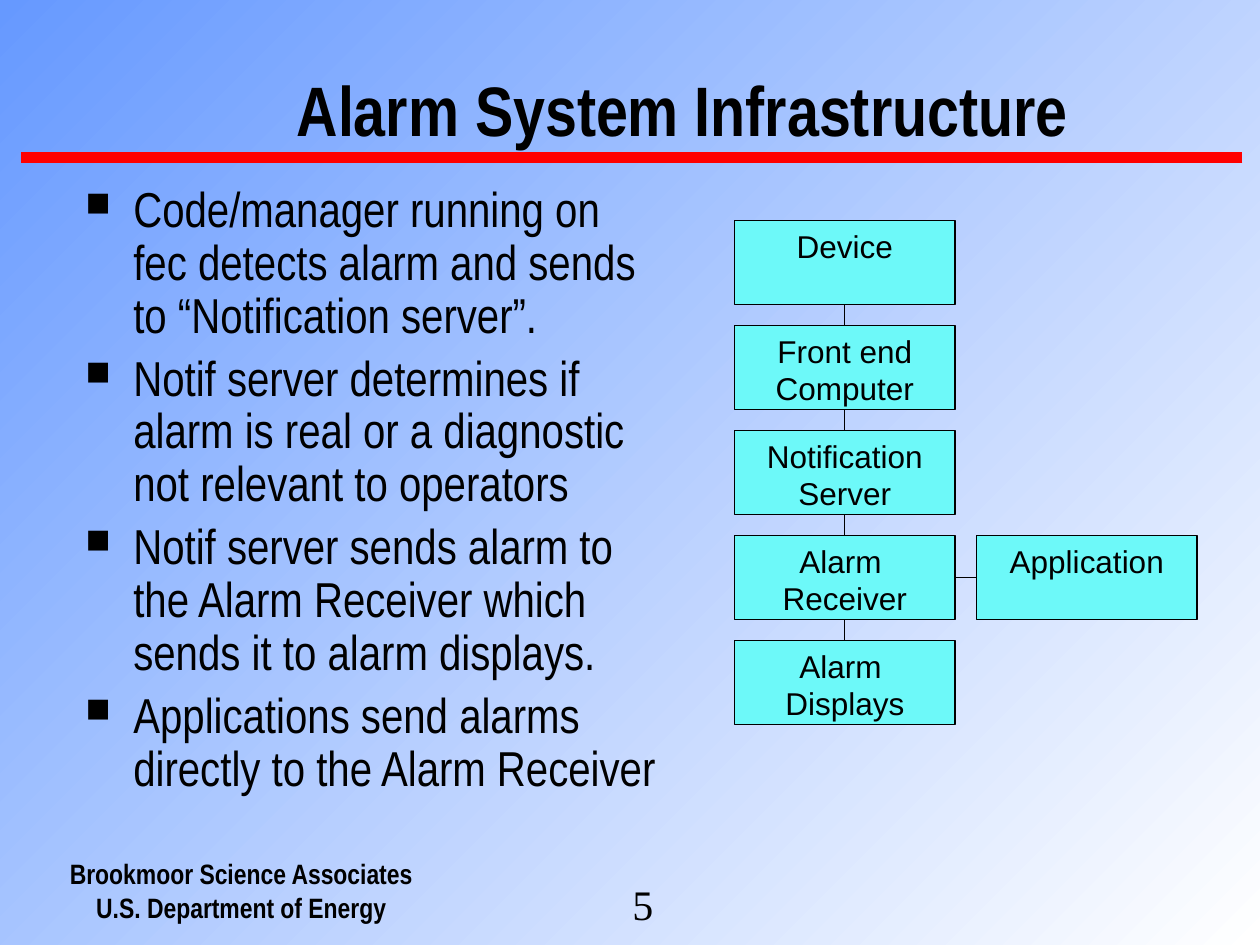
from lxml import etree
from pptx import Presentation
from pptx.dml.color import RGBColor
from pptx.enum import shapes, text
from pptx.oxml import parse_xml
from pptx.oxml.ns import nsdecls, qn
from pptx.util import Inches, Pt

TITLE = "Alarm System Infrastructure"
BULLETS = [
    "Code/manager running on fec detects alarm and sends to “Notification server”.",
    "Notif server determines if alarm is real or a diagnostic not relevant to operators",
    "Notif server sends alarm to the Alarm Receiver which sends it to alarm displays.",
    "Applications send alarms directly to the Alarm Receiver",
]
FOOTER = ["Brookmoor Science Associates", "U.S. Department of Energy"]
PAGE = "5"
CHAIN = [
    ["Device"],
    ["Front end", "Computer"],
    ["Notification", "Server"],
    ["Alarm ", "Receiver"],
    ["Alarm ", "Displays"],
]
APPLICATION = ["Application"]
RECEIVER_ROW = 3

COLORS = {"sky": "6699FF", "white": "FFFFFF", "rule": "FF0000",
          "box": "6DF9F9", "ink": "000000", "shade": "808080"}
NARROW, SANS, SERIF = "Arial Narrow", "Arial", "Times New Roman"
BOX_W, BOX_H = 1.75, 0.67
CHAIN_X, APP_X, CHAIN_Y = 5.83, 7.75, 1.75
PITCH = 5 / 6


def rgb(name):
    return RGBColor.from_string(COLORS[name])


def add_run(p, words, size, face, bold=False):
    r = p.add_run()
    r.text = words
    r.font.size = Pt(size)
    r.font.name = face
    r.font.bold = bold
    r.font.color.rgb = rgb("ink")
    return r


def add_text_box(s, x, y, w, h):
    tf = s.shapes.add_textbox(*map(Inches, (x, y, w, h))).text_frame
    tf.word_wrap = True
    return tf


def add_line(s, start, end, color="ink", width=0.75):
    line = s.shapes.add_connector(shapes.MSO_CONNECTOR.STRAIGHT,
                                  *map(Inches, start + end))
    line.line.color.rgb = rgb(color)
    line.line.width = Pt(width)
    etree.SubElement(line._element.spPr, qn("a:effectLst"))
    return line


def add_box(s, x, y, lines):
    sp = s.shapes.add_shape(shapes.MSO_SHAPE.RECTANGLE,
                            *map(Inches, (x, y, BOX_W, BOX_H)))
    sp.shadow.inherit = False
    sp.fill.solid()
    sp.fill.fore_color.rgb = rgb("box")
    sp.line.color.rgb = rgb("ink")
    sp.line.width = Pt(0.75)
    tf = sp.text_frame
    tf.vertical_anchor = text.MSO_ANCHOR.TOP
    for i, words in enumerate(lines):
        p = tf.add_paragraph() if i else tf.paragraphs[0]
        p.alignment = text.PP_ALIGN.CENTER
        add_run(p, words, 18, SANS)
    return sp


def join(s, first, first_side, second, second_side):
    line = add_line(s, (0, 0), (0, 0))
    line.begin_connect(first, first_side)
    line.end_connect(second, second_side)


prs = Presentation()
prs.slide_width, prs.slide_height = Inches(10), Inches(7.5)
s = prs.slides.add_slide(prs.slide_layouts[6])

# Background
fill = s.background.fill
fill.gradient()
fill.gradient_angle = 315
for stop, position, color in zip(fill.gradient_stops, (0, 1), ("sky", "white")):
    stop.position = position
    stop.color.rgb = rgb(color)

# Rule under the title
add_line(s, (9.86, 1.25), (0.17, 1.25), "rule", 6)

# Footer and page number
p = add_text_box(s, 0.25, 6.75, 3.33, 0.64).paragraphs[0]
p.alignment = text.PP_ALIGN.CENTER
for i, words in enumerate(FOOTER):
    if i:
        p.add_line_break()
    add_run(p, words, 16, NARROW, True)
add_run(add_text_box(s, 4.92, 6.92, 0.58, 0.5).paragraphs[0], PAGE, 24, SERIF)

# Title with a text shadow
tf = add_text_box(s, 1.25, 0, 8.33, 1.25)
tf.vertical_anchor = text.MSO_ANCHOR.BOTTOM
p = tf.paragraphs[0]
p.alignment = text.PP_ALIGN.CENTER
p.line_spacing = 0.9
r = add_run(p, TITLE, 40, NARROW, True)
r.font.fill._xPr.find(qn("a:solidFill")).addnext(parse_xml(
    f'<a:effectLst {nsdecls("a")}><a:outerShdw dist="35921" dir="2700000">'
    f'<a:srgbClr val="{COLORS["shade"]}"/></a:outerShdw></a:effectLst>'))

# Bullets
tf = add_text_box(s, 0.58, 1.42, 4.75, 5.17)
for i, words in enumerate(BULLETS):
    p = tf.add_paragraph() if i else tf.paragraphs[0]
    pPr = p._p.get_or_add_pPr()
    pPr.set("marL", str(Inches(0.38)))
    pPr.set("indent", str(Inches(-0.38)))
    etree.SubElement(pPr, qn("a:buSzPct"), val="70000")
    etree.SubElement(pPr, qn("a:buChar"), char="■")
    p.line_spacing = 0.9
    p.space_before = Pt(5.6 if i else 0)
    add_run(p, words, 28, NARROW)

# Alarm chain, with the application beside the receiver
chain = [add_box(s, CHAIN_X, CHAIN_Y + i * PITCH, lines)
         for i, lines in enumerate(CHAIN)]
application = add_box(s, APP_X, CHAIN_Y + RECEIVER_ROW * PITCH, APPLICATION)
for upper, lower in zip(chain, chain[1:]):
    join(s, upper, 2, lower, 0)
join(s, application, 1, chain[RECEIVER_ROW], 3)

prs.save("out.pptx")
